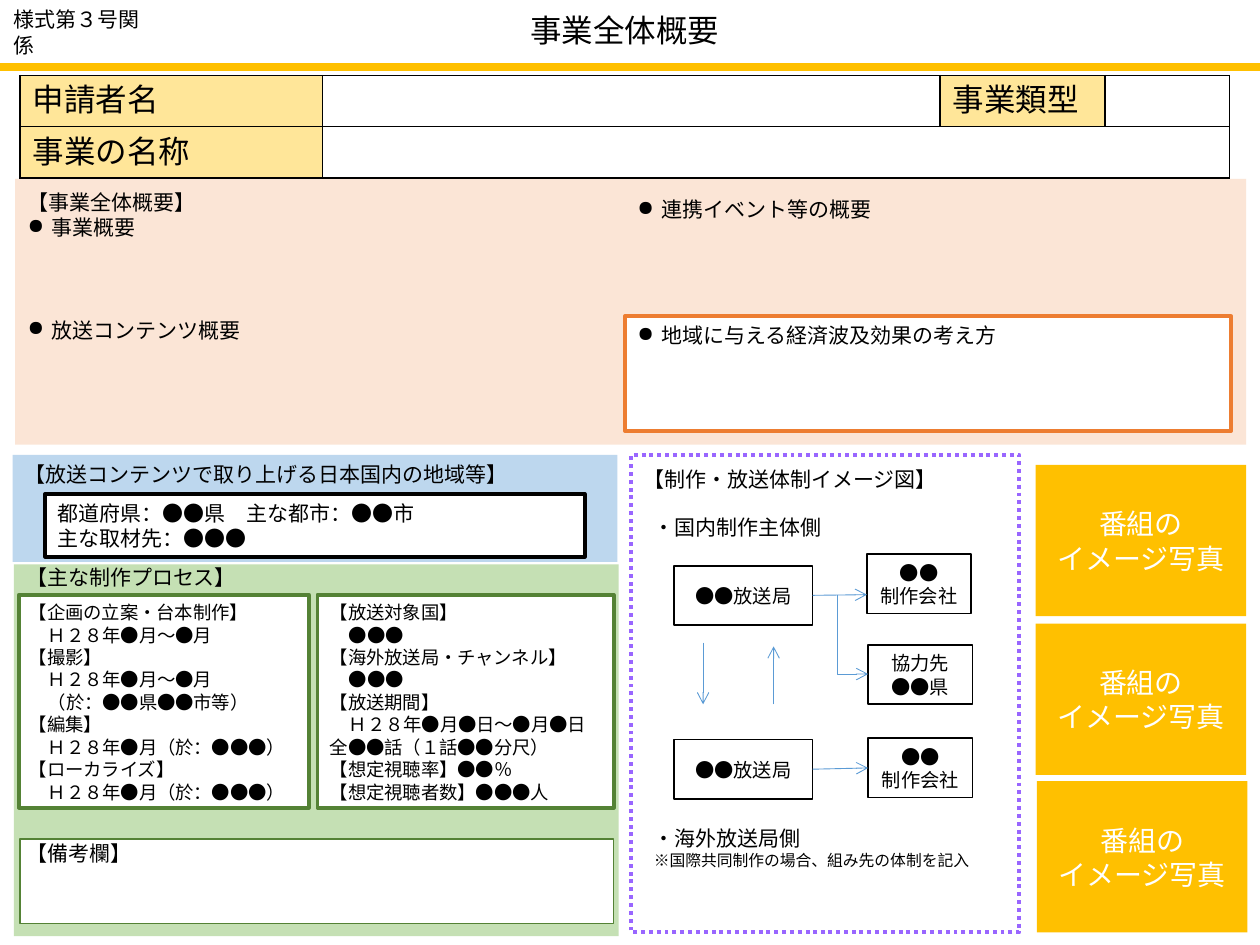
from lxml import etree
from pptx import Presentation
from pptx.dml.color import RGBColor
from pptx.enum import dml, shapes, text
from pptx.oxml.ns import qn
from pptx.util import Inches, Pt

COLORS = {
    "black": "000000", "white": "FFFFFF", "gold": "FFC000", "head": "FFE699",
    "peach": "FBE5D6", "orange": "ED7D31", "green": "C5E0B4",
    "dark_green": "548235", "blue": "BDD7EE", "arrow": "5B9BD5",
    "purple": "9966FF",
}
CJK, LATIN = "Noto Sans CJK JP", "Calibri"
LINE_HEIGHT = 1.22
BULLET = {"bullet": True}
INDENT = {"indent": 0.15}


def color(name):
    return RGBColor.from_string(COLORS[name])


def sub(parent, tag, **attrs):
    return etree.SubElement(parent, qn(tag), attrs)


def write(tf, lines, size=12, font=CJK, ink="black", align="LEFT",
          anchor="TOP", wrap=True, inset=0.1):
    """Fill a text frame; a line is a string or (string, overrides)."""
    tf.auto_size = text.MSO_AUTO_SIZE.NONE
    tf.word_wrap = wrap
    tf.vertical_anchor = text.MSO_ANCHOR[anchor]
    tf.margin_left = tf.margin_right = Inches(inset)
    tf.margin_top = tf.margin_bottom = Inches(0.05)
    for i, line in enumerate(lines):
        line, opts = (line, {}) if isinstance(line, str) else line
        p = tf.paragraphs[0] if i == 0 else tf.add_paragraph()
        points = opts.get("size", size)
        p.alignment = text.PP_ALIGN[align]
        p.line_spacing = Pt(round(points * LINE_HEIGHT, 1))
        p.space_before = Pt(opts.get("before", 0))
        p_pr = p._p.get_or_add_pPr()
        if "bullet" in opts:
            p_pr.set("marL", str(Inches(0.19)))
            p_pr.set("indent", str(-Inches(0.19)))
            sub(p_pr, "a:buChar", char="●")
        elif "indent" in opts:
            p_pr.set("marL", str(Inches(opts["indent"])))
        add_run(p, line, points, font, ink)


def add_run(p, words, size, font, ink):
    r = p.add_run()
    r.text = words
    r.font.size = Pt(size)
    r.font.name = font
    r.font.color.rgb = color(ink)
    sub(r._r.get_or_add_rPr(), "a:ea", typeface=font)


def add_label(s, at, lines, **fmt):
    tb = s.shapes.add_textbox(*map(Inches, at))
    write(tb.text_frame, lines, **fmt)


def add_box(s, at, fill="white", line=None, width=2.25, dash=None, lines=(), **fmt):
    sp = s.shapes.add_shape(shapes.MSO_SHAPE.RECTANGLE, *map(Inches, at))
    sp.shadow.inherit = False
    sp.fill.solid()
    sp.fill.fore_color.rgb = color(fill)
    if line:
        sp.line.color.rgb = color(line)
        sp.line.width = Pt(width)
        if dash:
            sp.line.dash_style = dash
    else:
        sp.line.fill.background()
    if lines:
        write(sp.text_frame, lines, **fmt)
    return sp


def add_line(s, start, end, ink="arrow", width=0.5, arrow=True):
    c = s.shapes.add_connector(shapes.MSO_CONNECTOR.STRAIGHT,
                               *map(Inches, start + end))
    c.line.color.rgb = color(ink)
    c.line.width = Pt(width)
    if arrow:
        sub(c.line._get_or_add_ln(), "a:tailEnd", type="arrow")
    sub(c._element.spPr, "a:effectLst")
    return c


def add_bent_arrow(s, start, end):
    """Arrow going down from start, then right to end."""
    (x1, y1), (x2, y2) = start, end
    w, h = y2 - y1, x2 - x1
    left, top = (x1 + x2 - w) / 2, (y1 + y2 - h) / 2
    c = add_line(s, (left, top), (left + w, top + h))
    sp_pr = c._element.spPr
    sp_pr.find(qn("a:prstGeom")).set("prst", "bentConnector2")
    xfrm = sp_pr.find(qn("a:xfrm"))
    xfrm.set("rot", "16200000")
    xfrm.set("flipH", "1")


def set_borders(cell):
    tc_pr = cell._tc.get_or_add_tcPr()
    for i, side in enumerate(("a:lnL", "a:lnR", "a:lnT", "a:lnB")):
        ln = etree.Element(qn(side), {"w": str(Pt(1))})
        sub(sub(ln, "a:solidFill"), "a:srgbClr", val=COLORS["black"])
        tc_pr.insert(i, ln)


def add_applicant_table(s):
    frame = s.shapes.add_table(2, 4, *map(Inches, (0.16, 0.6, 9.6, 0.8)))
    table = frame.table
    for col, width in zip(table.columns, (2.4, 4.9, 1.31, 0.99)):
        col.width = Inches(width)
    heads = {(0, 0): "申請者名", (0, 2): "事業類型", (1, 0): "事業の名称"}
    for r in range(2):
        for c in range(4):
            cell = table.cell(r, c)
            if (r, c) in heads:
                cell.fill.solid()
                cell.fill.fore_color.rgb = color("head")
                add_run(cell.text_frame.paragraphs[0], heads[r, c], 18, LATIN, "black")
            else:
                cell.fill.background()
            set_borders(cell)
    table.cell(1, 1).merge(table.cell(1, 3))


def add_header(s):
    title = s.shapes.title
    title.left, title.top, title.width, title.height = map(
        Inches, (4.1, 0.03, 1.72, 0.4))
    write(title.text_frame, ["事業全体概要"], size=18, align="CENTER", wrap=False)
    add_line(s, (0, 0.53), (10, 0.53), ink="gold", width=4.5, arrow=False)
    add_label(s, (0.01, 0, 1.33, 0.3), ["様式第３号関係"], font=LATIN)


def add_overview(s):
    add_box(s, (0.12, 1.42, 9.77, 2.11), "peach")
    add_label(s, (0.12, 1.45, 4.71, 2.12), [
        "【事業全体概要】", ("事業概要", BULLET),
        ("放送コンテンツ概要", {**BULLET, "before": 44})])
    add_label(s, (4.96, 1.51, 4.71, 0.91), [("連携イベント等の概要", BULLET)])
    add_box(s, (4.96, 2.51, 4.81, 0.91), line="orange",
            lines=[("地域に与える経済波及効果の考え方", BULLET)])


def add_process(s):
    add_box(s, (0.11, 4.48, 4.8, 2.95), "green")
    add_label(s, (0.11, 4.43, 4.8, 0.3), ["【主な制作プロセス】"])
    add_box(s, (0.15, 4.72, 2.3, 1.69), line="dark_green", size=10.5, inset=0.08, lines=[
        "【企画の立案・台本制作】", ("Ｈ２８年●月～●月", INDENT),
        "【撮影】", ("Ｈ２８年●月～●月", INDENT), ("（於：●●県●●市等）", INDENT),
        "【編集】", ("Ｈ２８年●月（於：●●●）", INDENT),
        "【ローカライズ】", ("Ｈ２８年●月（於：●●●）", INDENT)])
    add_box(s, (2.52, 4.72, 2.35, 1.69), line="dark_green", size=10.5, lines=[
        "【放送対象国】", ("●●●", INDENT),
        "【海外放送局・チャンネル】", ("●●●", INDENT),
        "【放送期間】", ("Ｈ２８年●月●日～●月●日", INDENT), "全●●話（１話●●分尺）",
        "【想定視聴率】●●％", "【想定視聴者数】●●●人"])
    add_box(s, (0.16, 6.66, 4.71, 0.67), line="dark_green", width=1)
    add_label(s, (0.11, 6.62, 2.34, 0.3), ["【備考欄】"])


def add_regions(s):
    add_box(s, (0.1, 3.61, 4.8, 0.85), "blue")
    add_label(s, (0.1, 3.61, 4.8, 0.3), ["【放送コンテンツで取り上げる日本国内の地域等】"])
    add_box(s, (0.36, 3.92, 4.28, 0.5), line="black",
            lines=["都道府県：●●県　主な都市：●●市", "主な取材先：●●●"])


def add_structure(s):
    add_box(s, (5.01, 3.61, 3.08, 3.79), line="purple", dash=dml.MSO_LINE.ROUND_DOT)
    add_label(s, (5.01, 3.65, 3.95, 0.3), ["【制作・放送体制イメージ図】"])
    add_label(s, (5.09, 4.03, 2.37, 0.3), ["・国内制作主体側"])
    add_label(s, (5.09, 6.5, 2.92, 0.45), [
        "・海外放送局側", ("※国際共同制作の場合、組み先の体制を記入", {"size": 9})])

    def node(x, y, w, *lines):
        return add_box(s, (x, y, w, 0.47), line="black", width=1, lines=lines,
                       size=11, align="CENTER", anchor="MIDDLE")

    domestic = node(5.35, 4.49, 1.1, "●●放送局")
    overseas = node(5.35, 5.87, 1.1, "●●放送局")
    node(6.88, 4.4, 0.83, "●●", "制作会社")
    node(6.89, 5.12, 0.83, "協力先", "●●県")
    overseas_maker = node(6.89, 5.86, 0.83, "●●", "制作会社")

    add_line(s, (5.58, 5.1), (5.58, 5.59))
    add_line(s, (6.14, 5.59), (6.14, 5.13))
    add_line(s, (6.45, 4.72), (6.88, 4.72)).begin_connect(domestic, 3)
    link = add_line(s, (6.45, 6.1), (6.89, 6.1))
    link.begin_connect(overseas, 3)
    link.end_connect(overseas_maker, 1)
    add_bent_arrow(s, (6.65, 4.72), (6.89, 5.35))


def add_photo_frames(s):
    for x, y in ((8.22, 3.69), (8.22, 4.95), (8.23, 6.2)):
        add_box(s, (x, y, 1.67, 1.2), "gold", lines=["番組の", "イメージ写真"],
                size=16, ink="white", align="CENTER", anchor="MIDDLE")


def main():
    prs = Presentation()
    prs.slide_width, prs.slide_height = Inches(10), Inches(7.5)
    s = prs.slides.add_slide(prs.slide_layouts[5])
    for build in (add_overview, add_process, add_structure, add_regions,
                  add_photo_frames, add_header, add_applicant_table):
        build(s)
    prs.save("out.pptx")


if __name__ == "__main__":
    main()
